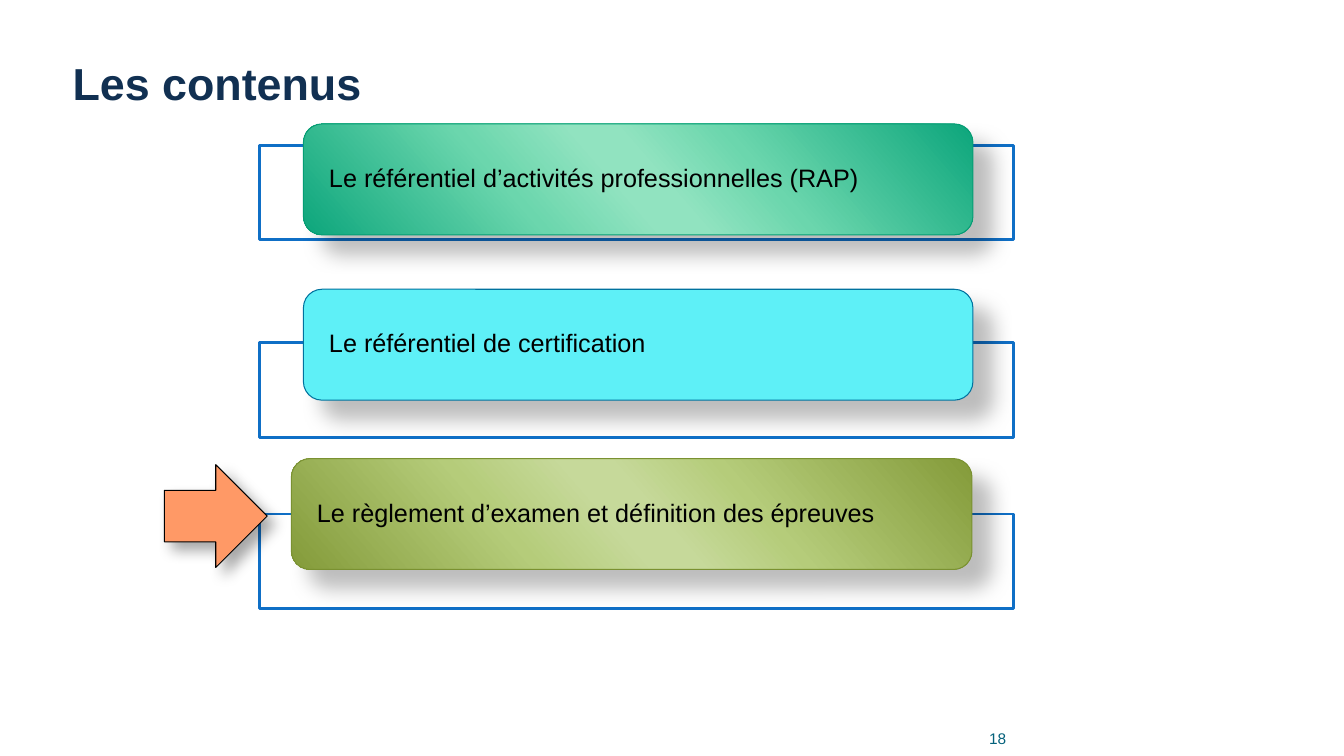
import lxml.etree
import pptx
import pptx.dml.color
import pptx.enum.shapes
import pptx.enum.text
import pptx.oxml.ns
import pptx.util
from pptx.util import Inches

COLORS = {
    "white": "FFFFFF", "black": "000000", "title": "113052", "number": "04617B",
    "frame": "0F6FC6", "cyan": "5EF0F7", "cyan_edge": "00729E", "arrow": "FF9966",
    "green": "0DA67C", "green_mid": "6BD6AD", "green_light": "91E3C0", "green_edge": "059D74",
    "olive": "849B3A", "olive_mid": "B5CC7A", "olive_light": "C6D99A", "olive_edge": "7A9131",
}
SHAPES = pptx.enum.shapes.MSO_SHAPE
ANCHOR = pptx.enum.text.MSO_ANCHOR
ALIGN = pptx.enum.text.PP_ALIGN


def rgb(name):
    return pptx.dml.color.RGBColor.from_string(COLORS[name])


def add_xml(parent, tag, **attributes):
    element = lxml.etree.SubElement(parent, pptx.oxml.ns.qn(tag))
    for key, value in attributes.items():
        element.set(key, str(value))
    return element


class ContentsSlide:
    font = "Arial"

    def __init__(self, presentation):
        self.slide = presentation.slides.add_slide(presentation.slide_layouts[6])

    def set_text(self, holder, text, size, color, anchor, inset, align=ALIGN.LEFT, bold=False):
        frame = holder.text_frame
        frame.word_wrap = True
        frame.vertical_anchor = anchor
        frame.margin_left = frame.margin_right = Inches(inset)
        frame.margin_top = frame.margin_bottom = 0
        paragraph = frame.paragraphs[0]
        paragraph.text = text
        paragraph.alignment = align
        paragraph.font.name = self.font
        paragraph.font.size = pptx.util.Pt(size)
        paragraph.font.bold = bold
        paragraph.font.color.rgb = rgb(color)
        return paragraph

    def label(self, box, text, size, color, **style):
        holder = self.slide.shapes.add_textbox(*map(Inches, box))
        self.set_text(holder, text, size, color, ANCHOR.BOTTOM, **style)

    def shape(self, kind, box, fill, edge, width):
        shape = self.slide.shapes.add_shape(kind, *map(Inches, box))
        shape.shadow.inherit = False
        shape.line.color.rgb = rgb(edge)
        shape.line.width = pptx.util.Pt(width)
        if isinstance(fill, tuple):
            self.gradient(shape, *fill)
        else:
            shape.fill.solid()
            shape.fill.fore_color.rgb = rgb(fill)
        return shape

    def gradient(self, shape, dark, middle, light):
        shape.fill.gradient()
        shape.fill.gradient_angle = 221
        stops = shape.element.spPr.find(".//" + pptx.oxml.ns.qn("a:gsLst"))
        for stop in list(stops):
            stops.remove(stop)
        positions = (0, 33, 47, 53, 68, 100)
        for position, name in zip(positions, (dark, middle, light, light, middle, dark)):
            stop = add_xml(stops, "a:gs", pos=position * 1000)
            add_xml(stop, "a:srgbClr", val=COLORS[name])

    def shadow(self, shape, opacity, blur, distance):
        effects = shape.element.spPr.find(pptx.oxml.ns.qn("a:effectLst"))
        outer = add_xml(effects, "a:outerShdw", blurRad=pptx.util.Pt(blur),
                        dist=pptx.util.Pt(distance), dir=45 * 60000,
                        algn="tl", rotWithShape=0)
        color = add_xml(outer, "a:srgbClr", val=COLORS["black"])
        add_xml(color, "a:alpha", val=opacity * 1000)

    def frame(self, top):
        frame = self.shape(SHAPES.RECTANGLE, (2.57, top, 7.48, 0.94), "white", "frame", 2)
        color = frame.element.spPr.find(
            pptx.oxml.ns.qn("a:solidFill") + "/" + pptx.oxml.ns.qn("a:srgbClr"))
        add_xml(color, "a:alpha", val=90000)

    def card(self, left, top, width, text, fill, edge):
        card = self.shape(SHAPES.ROUNDED_RECTANGLE, (left, top, width, 1.1), fill, edge, 0.75)
        self.shadow(card, 26, 15, 18)
        paragraph = self.set_text(card, text, 18, "black", ANCHOR.MIDDLE, 0.2)
        paragraph.line_spacing = 0.9

    def arrow(self, box):
        arrow = self.shape(SHAPES.RIGHT_ARROW, box, "arrow", "black", 0.75)
        self.shadow(arrow, 35, 10.2, 8)


def main():
    presentation = pptx.Presentation()
    presentation.slide_width = Inches(13.33)
    presentation.slide_height = Inches(7.5)
    contents = ContentsSlide(presentation)

    contents.label((0.67, 0.35, 10.56, 0.74), "Les contenus", 32, "title", inset=0.05, bold=True)
    contents.label((9.12, 7.17, 0.86, 0.25), "18", 11, "number", inset=0, align=ALIGN.RIGHT)

    documents = [
        (1.44, 3.01, 1.23, 6.64, "Le référentiel d’activités professionnelles (RAP)",
         ("green", "green_mid", "green_light"), "green_edge"),
        (3.4, 3.01, 2.87, 6.64, "Le référentiel de certification", "cyan", "cyan_edge"),
        (5.1, 2.89, 4.55, 6.75, "Le règlement d’examen et définition des épreuves",
         ("olive", "olive_mid", "olive_light"), "olive_edge"),
    ]
    for frame_top, *card in documents:
        contents.frame(frame_top)
        contents.card(*card)
    contents.arrow((1.63, 4.61, 1.02, 1.02))

    presentation.save("out.pptx")


if __name__ == "__main__":
    main()
